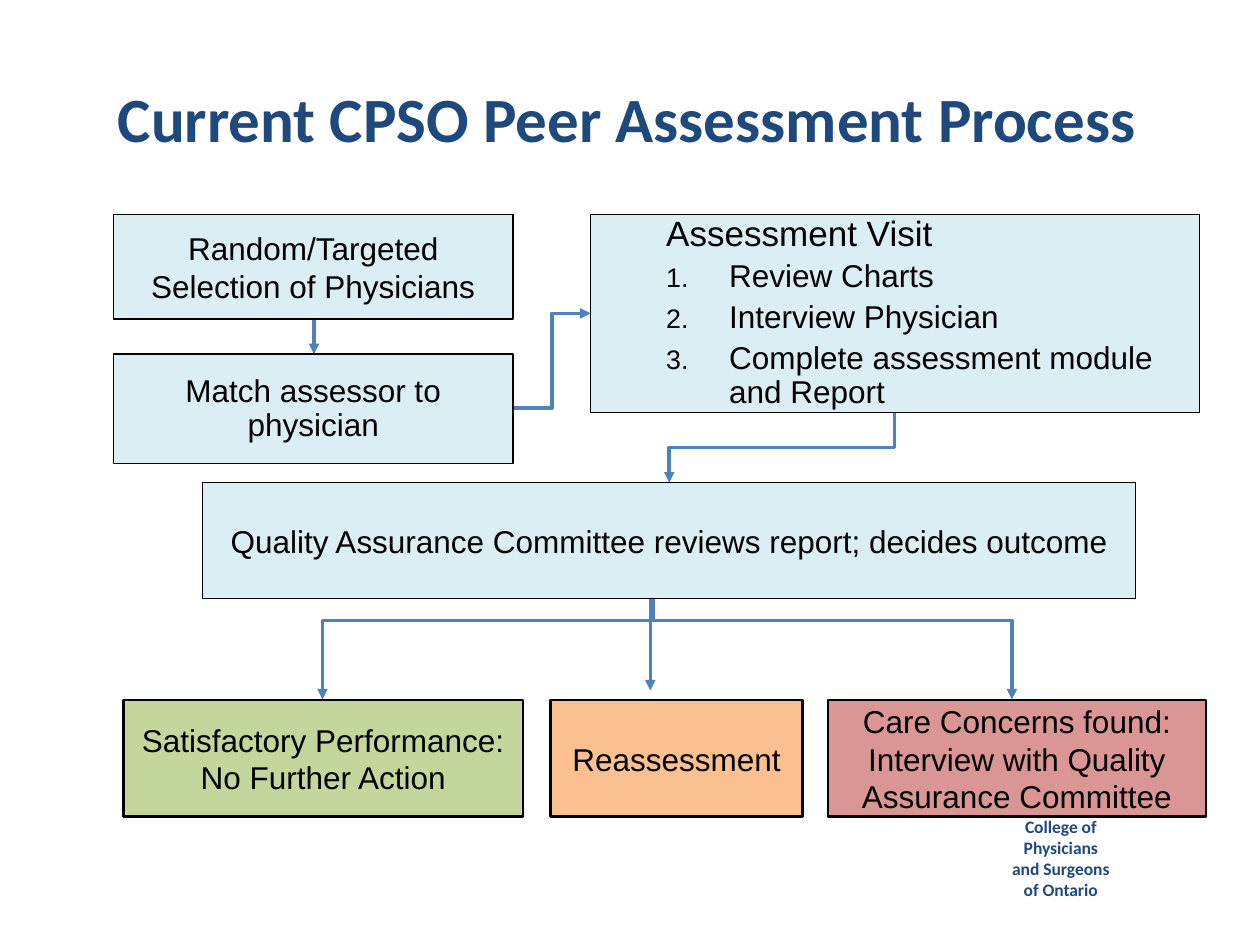
from lxml import etree
from pptx import Presentation, util as u
from pptx.dml.color import RGBColor
from pptx.enum import shapes, text
from pptx.oxml import ns

Cm, Pt = u.Cm, u.Pt
HUE = {"ink": "000000", "navy": "1F497D", "arrow": "4F81BD", "step": "DBEEF4",
       "good": "C3D69B", "again": "FAC090", "care": "D99694"}

deck = Presentation()
deck.slide_width, deck.slide_height = Cm(25.4), Cm(19.05)
slide = deck.slides.add_slide(deck.slide_layouts[6])


def rgb(name):
    return RGBColor.from_string(HUE[name])


def write(frame, line, size=18, face="Arial", hue="ink", bold=False,
          align="CENTER", lead=None, gap=0, hang=False, num=False):
    """Put one paragraph into a text frame."""
    para = frame.paragraphs[0]
    if para.runs:
        para = frame.add_paragraph()
    para.alignment = getattr(text.PP_ALIGN, align)
    if lead:
        para.line_spacing = lead
    if gap:
        para.space_before = Pt(gap)
    props = para._p.get_or_add_pPr()
    if hang:
        props.set("marL", str(Cm(2.54)))
        props.set("indent", str(-Cm(1.27) if num else -Cm(1.27)))
    if num:
        etree.SubElement(props, ns.qn("a:buSzPct"), val="85000")
        etree.SubElement(props, ns.qn("a:buFont"), typeface="+mj-lt")
        etree.SubElement(props, ns.qn("a:buAutoNum"), type="arabicPeriod")
    run = para.add_run()
    run.text = line
    font = run.font
    font.size, font.name, font.bold = Pt(size), face, bold
    font.color.rgb = rgb(hue)


def link(x1, y1, x2, y2, bend=None):
    """Draw an arrow; bend is None, "across" or "down" (its first leg)."""
    kind = shapes.MSO_CONNECTOR.ELBOW if bend else shapes.MSO_CONNECTOR.STRAIGHT
    turn = 0
    if bend == "down":
        # An elbow starts sideways, so lay it flat about its centre and turn it
        midx, midy = (x1 + x2) / 2, (y1 + y2) / 2
        half, rise = (y2 - y1) / 2, abs(x2 - x1) / 2
        turn = 90 if x2 < x1 else 270
        side = half if x2 < x1 else -half
        x1, y1, x2, y2 = midx - side, midy - rise, midx + side, midy + rise
    wire = slide.shapes.add_connector(kind, Cm(x1), Cm(y1), Cm(x2), Cm(y2))
    wire.line.color.rgb = rgb("arrow")
    wire.line.width = Pt(2)
    props = wire._element.spPr
    if turn:
        props.find(ns.qn("a:xfrm")).set("rot", str(turn * 60000))
    etree.SubElement(wire.line._get_or_add_ln(), ns.qn("a:tailEnd"),
                     type="triangle")
    etree.SubElement(props, ns.qn("a:effectLst"))


# Title and college name
for line, spot, size, mid in (
        ("Current CPSO Peer Assessment Process", (0.89, 1.52, 23.5, 1.7), 36, "MIDDLE"),
        ("College of Physicians and Surgeons of Ontario",
         (20.09, 16.33, 2.59, 1.96), 10, "TOP")):
    frame = slide.shapes.add_textbox(*map(Cm, spot)).text_frame
    frame.word_wrap = True
    frame.vertical_anchor = getattr(text.MSO_ANCHOR, mid)
    write(frame, line, size=size, face="Calibri", hue="navy", bold=True)

# Arrows, which lie behind the boxes
link(6.33, 6.44, 6.33, 7.14)
link(10.34, 8.23, 11.91, 6.32, bend="across")
link(18.03, 8.32, 13.49, 9.73, bend="down")
link(13.16, 10.92, 6.5, 14.1, bend="down")
link(13.11, 10.92, 13.11, 13.92)
link(13.11, 10.92, 20.4, 14.1, bend="down")

# Boxes: place, fill, outline width, paragraphs with their format
item = dict(align="LEFT", lead=0.9, gap=4, hang=True, num=True)
low, tall = 14.12, 2.34
boxes = (
    ((2.29, 4.32, 8.05, 2.11), "step", 0.75,
     [("Random/Targeted Selection of Physicians", {})]),
    ((2.29, 7.14, 8.05, 2.21), "step", 0.75,
     [("Match assessor to physician", dict(lead=0.9))]),
    ((11.91, 4.32, 12.27, 3.99), "step", 0.75,
     [("Assessment Visit", dict(size=20, align="LEFT", lead=0.9, hang=True)),
      ("Review Charts", item),
      ("Interview Physician", item),
      ("Complete assessment module and Report", item)]),
    ((4.09, 9.73, 18.8, tall), "step", 0.75,
     [("Quality Assurance Committee reviews report; decides outcome", {})]),
    ((2.49, low, 8.05, tall), "good", 1.25,
     [("Satisfactory Performance:", {}), ("No Further Action", {})]),
    ((11.1, low, 5.08, tall), "again", 1.25, [("Reassessment", {})]),
    ((16.69, low, 7.62, tall), "care", 1.25,
     [("Care Concerns found: Interview with Quality Assurance Committee", {})]),
)
for spot, fill, edge, lines in boxes:
    box = slide.shapes.add_shape(shapes.MSO_SHAPE.FLOWCHART_PROCESS, *map(Cm, spot))
    box.shadow.inherit = False
    box.fill.solid()
    box.fill.fore_color.rgb = rgb(fill)
    box.line.color.rgb = rgb("ink")
    box.line.width = Pt(edge)
    frame = box.text_frame
    frame.word_wrap = True
    frame.vertical_anchor = text.MSO_ANCHOR.MIDDLE
    for line, form in lines:
        write(frame, line, **form)

deck.save("out.pptx")
